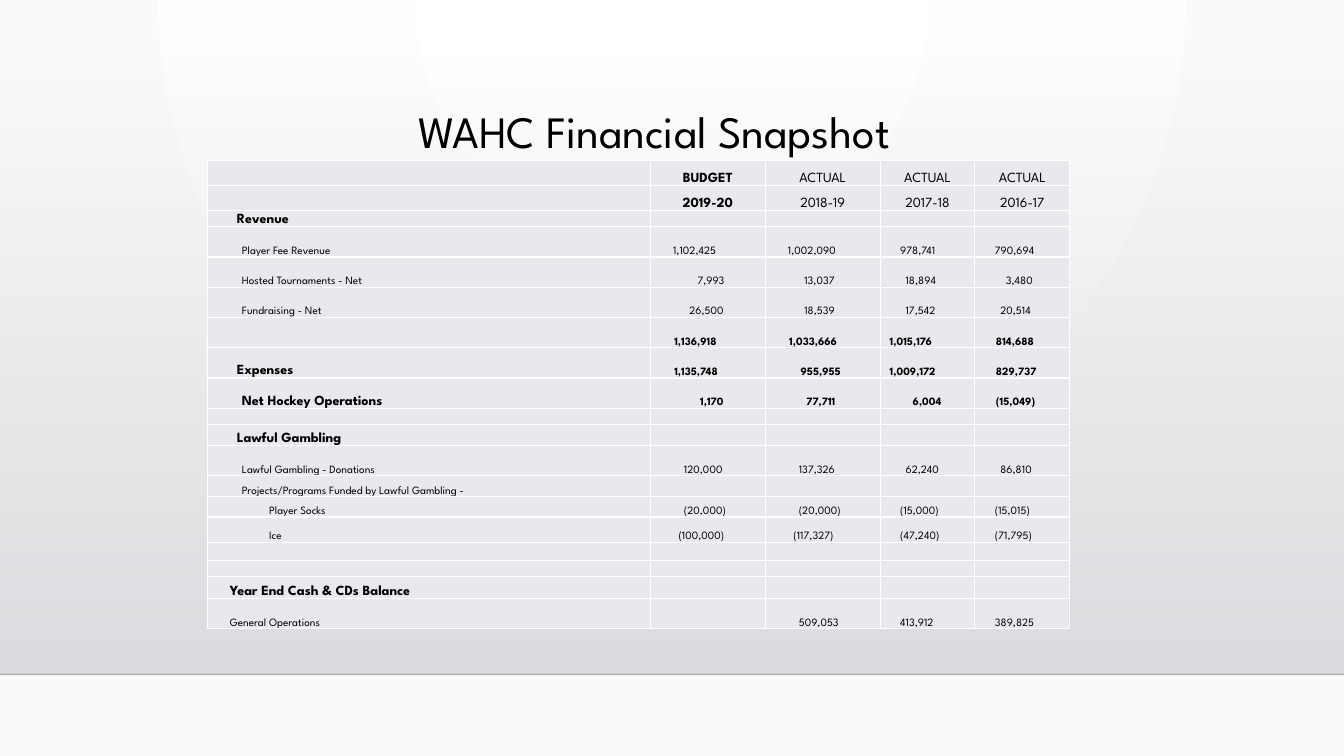
from pptx import Presentation
from pptx.dml.color import RGBColor
from pptx.enum.shapes import MSO_CONNECTOR, MSO_SHAPE
from pptx.enum.text import MSO_ANCHOR, PP_ALIGN
from pptx.oxml import parse_xml
from pptx.oxml.ns import nsdecls, qn
from pptx.util import Inches, Pt

WIDE, HIGH = 13.33, 7.5
FACE = "League Spartan"
INK, CELL, RULE = "000000", "E9E9ED", "FFFFFF"
COLS = [4.39, 1.14, 1.14, 0.94, 0.94]

# Kind of row: label indent, label size, label bold, figures bold
KINDS = {
    "head": (0.01, 10, False, False),
    "group": (0.29, 10, True, True),
    "net": (0.34, 10, True, True),
    "total": (0.34, 8, True, True),
    "item": (0.34, 8, False, False),
    "sub": (0.61, 8, False, False),
    "year": (0.22, 10, True, False),
    "cash": (0.22, 8, False, False),
    "gap": (0.01, 8, False, False),
}

# Kind, row height, label, figures
ROWS = [
    ("head", 0.25, "", ["BUDGET", "ACTUAL", "ACTUAL", "ACTUAL"]),
    ("head", 0.25, "", ["2019-20", "2018-19", "2017-18", "2016-17"]),
    ("group", 0.16, "Revenue", []),
    ("item", 0.3, "Player Fee Revenue", ["1,102,425", "1,002,090", "978,741", "790,694"]),
    ("item", 0.3, "Hosted Tournaments - Net", ["7,993", "13,037", "18,894", "3,480"]),
    ("item", 0.3, "Fundraising - Net", ["26,500", "18,539", "17,542", "20,514"]),
    ("total", 0.3, "", ["1,136,918", "1,033,666", "1,015,176", "814,688"]),
    ("group", 0.3, "Expenses", ["1,135,748", "955,955", "1,009,172", "829,737"]),
    ("net", 0.3, "Net Hockey Operations", ["1,170", "77,711", "6,004", "(15,049)"]),
    ("gap", 0.16, "", []),
    ("group", 0.21, "Lawful Gambling", []),
    ("item", 0.3, "Lawful Gambling - Donations", ["120,000", "137,326", "62,240", "86,810"]),
    ("item", 0.21, "Projects/Programs Funded by Lawful Gambling -", []),
    ("sub", 0.2, "Player Socks", ["(20,000)", "(20,000)", "(15,000)", "(15,015)"]),
    ("sub", 0.25, "Ice", ["(100,000)", "(117,327)", "(47,240)", "(71,795)"]),
    ("gap", 0.18, "", []),
    ("gap", 0.16, "", []),
    ("year", 0.22, "Year End Cash & CDs Balance", []),
    ("cash", 0.3, "General Operations", ["", "509,053", "413,912", "389,825"]),
]

# Figure indent in space widths, by digit count
BROAD = {7: 8, 6: 12, 5: 14, 4: 17}
SLIM = {7: 3, 6: 7, 5: 9, 4: 11}


def color(code):
    return RGBColor.from_string(code)


def assign(item, **values):
    for name, value in values.items():
        setattr(item, name, value)


def blend(root, stops, shade):
    """Swap the gradient under root for one with the given stops and shading."""
    old = root.find(".//" + qn("a:gradFill"))
    marks = "".join(
        f'<a:gs pos="{pos * 1000}"><a:srgbClr val="{code}">'
        f'<a:alpha val="{alpha * 1000}"/></a:srgbClr></a:gs>'
        for pos, code, alpha in stops)
    new = parse_xml(f'<a:gradFill {nsdecls("a")} rotWithShape="1">'
                    f'<a:gsLst>{marks}</a:gsLst>{shade}</a:gradFill>')
    old.getparent().replace(old, new)


def backdrop(slide):
    # Radial page background
    slide.background.fill.gradient()
    blend(slide._element, [(0, "FFFFFF", 100), (100, "FAFAFA", 100)],
          '<a:path path="circle"><a:fillToRect l="43000" t="0" r="43000" b="100000"/></a:path>')
    # Wall fading in towards the floor
    top, floor = 0.51, 6.69
    wall = slide.shapes.add_shape(MSO_SHAPE.RECTANGLE, 0, Inches(top),
                                  Inches(WIDE), Inches(floor - top))
    wall.shadow.inherit = False
    wall.line.fill.background()
    wall.fill.gradient()
    blend(wall._element, [(0, "DCDCE0", 0), (100, "DEDEE2", 100)],
          '<a:lin ang="5400000" scaled="0"/>')
    # Floor line
    edge = slide.shapes.add_connector(MSO_CONNECTOR.STRAIGHT, 0, Inches(floor),
                                      Inches(WIDE), Inches(floor))
    assign(edge.line, width=Pt(1))
    edge.line.color.rgb = color("000001")
    tint = edge._element.find(".//" + qn("a:srgbClr"))
    tint.append(parse_xml(f'<a:alpha {nsdecls("a")} val="20000"/>'))
    edge._element.spPr.append(parse_xml(f'<a:effectLst {nsdecls("a")}/>'))


def write(para, text, size, bold=False):
    run = para.add_run()
    run.text = text
    assign(run.font, name=FACE, size=Pt(size), bold=bold)
    run.font.color.rgb = color(INK)


def heading(slide, left, top, width, height):
    title = slide.shapes.title
    assign(title, left=Inches(left), top=Inches(top),
           width=Inches(width), height=Inches(height))
    assign(title.text_frame, vertical_anchor=MSO_ANCHOR.TOP, word_wrap=True)
    para = title.text_frame.paragraphs[0]
    assign(para, alignment=PP_ALIGN.CENTER, line_spacing=0.9)
    write(para, "WAHC Financial Snapshot", 32)
    slide.shapes._spTree.append(title._element)  # in front of the wall


def indent(text, col, bold):
    digits = sum(char.isdigit() for char in text)
    count = (BROAD if col < 3 else SLIM)[digits] - 2 * text.startswith("(")
    return 0.01 + count * (0.0285 if bold else 0.027)


def frame(cell):
    props = cell._tc.get_or_add_tcPr()
    for side in "LRTB":
        props.append(parse_xml(
            f'<a:ln{side} {nsdecls("a")} w="12700"><a:solidFill>'
            f'<a:srgbClr val="{RULE}"/></a:solidFill></a:ln{side}>'))
    cell.fill.solid()
    cell.fill.fore_color.rgb = color(CELL)


def enter(cell, kind, col, text):
    inset, size, strong, bold = KINDS[kind]
    para = cell.text_frame.paragraphs[0]
    if kind == "head":
        para.alignment = PP_ALIGN.CENTER
        bold = col == 1
    elif col == 0:
        bold = strong
    else:
        size = 8
        inset = indent(text, col, bold) if text else 0.01
    assign(cell, margin_left=Inches(inset), margin_right=Inches(0.01),
           margin_top=Inches(0.01), margin_bottom=0,
           vertical_anchor=MSO_ANCHOR.BOTTOM)
    if text:
        write(para, text, size, bold)
    else:
        para._p.append(parse_xml(f'<a:endParaRPr {nsdecls("a")} sz="800"/>'))


def ledger(slide, left, top):
    height = sum(row[1] for row in ROWS)
    table = slide.shapes.add_table(len(ROWS), len(COLS), Inches(left), Inches(top),
                                   Inches(sum(COLS)), Inches(height)).table
    assign(table, first_row=False, horz_banding=False)
    for column, width in zip(table.columns, COLS):
        column.width = Inches(width)
    for row, (kind, tall, label, figures) in zip(table.rows, ROWS):
        row.height = Inches(tall)
        texts = [label] + (figures or [""] * 4)
        for col, (cell, text) in enumerate(zip(row.cells, texts)):
            frame(cell)
            enter(cell, kind, col, text)


def main():
    deck = Presentation()
    assign(deck, slide_width=Inches(WIDE), slide_height=Inches(HIGH))
    slide = deck.slides.add_slide(deck.slide_layouts[5])
    backdrop(slide)
    heading(slide, 1.24, 1.04, 10.5, 1.15)
    ledger(slide, 2.06, 1.59)
    deck.save("out.pptx")


if __name__ == "__main__":
    main()
